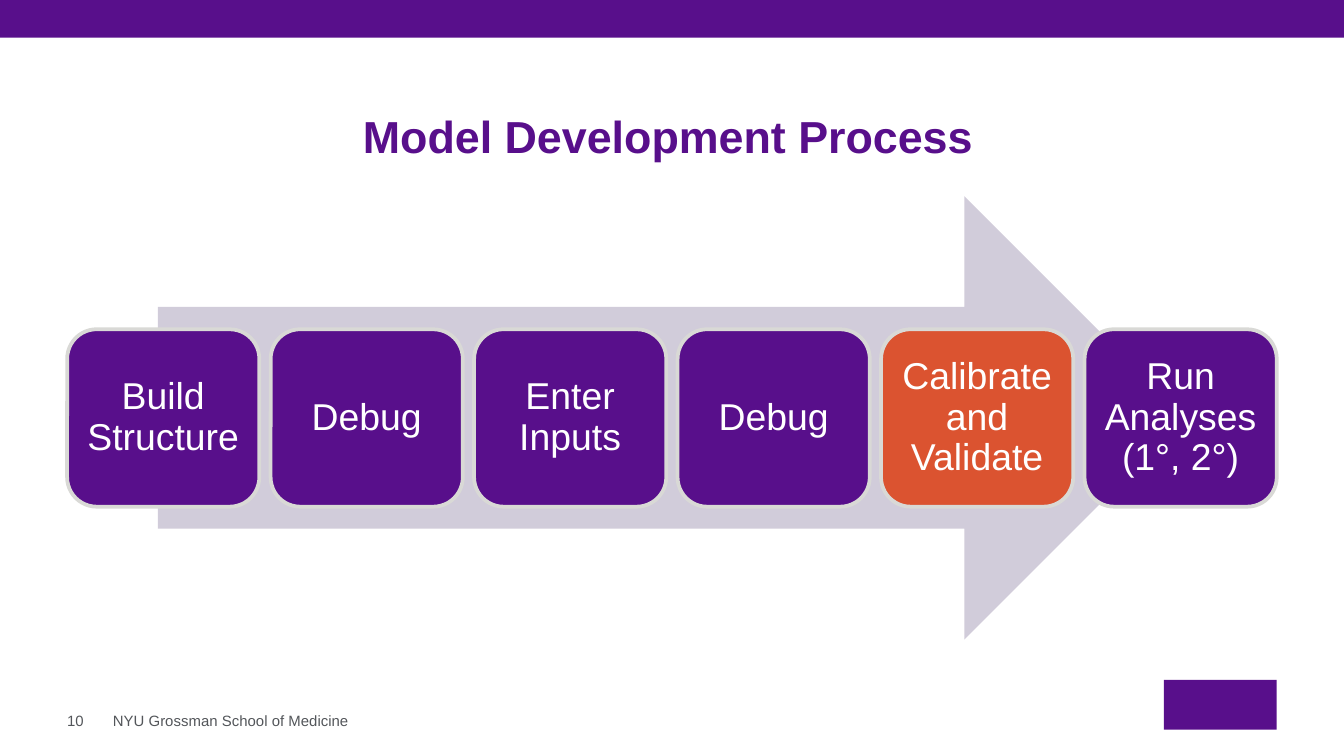
from pptx import Presentation
from pptx.dml.color import RGBColor
from pptx.enum.shapes import MSO_SHAPE
from pptx.enum.text import MSO_ANCHOR, PP_ALIGN
from pptx.util import Inches, Pt

# Content
TITLE = "Model Development Process"
SCHOOL = "NYU Grossman School of Medicine"
PAGE = "10"
PURPLE, ORANGE, WHITE = "580F8B", "DB5330", "FFFFFF"
STEPS = [
    ("Build Structure", PURPLE),
    ("Debug", PURPLE),
    ("Enter Inputs", PURPLE),
    ("Debug", PURPLE),
    ("Calibrate and Validate", ORANGE),
    ("Run Analyses (1°, 2°)", PURPLE),
]

# Layout, in inches, on a 16:9 slide
WIDTH = 10
HEIGHT = WIDTH * 9 / 16
MARGIN = 0.5
STEP_WIDTH, STEP_HEIGHT = 1.43, 1.32
ARROW_WIDTH, ARROW_HEIGHT, ARROW_TOP = 7.65, 3.3, 1.46
FOOTER_TOP, FOOTER_HEIGHT = 5.3, 0.13

# Text formats
TITLE_FONT = {"size": Pt(24), "bold": True}
FOOTER_FONT = {"size": Pt(8)}
STEP_FONT = {"size": Pt(20)}


def color(value):
    return RGBColor.from_string(value)


def add_block(kind, box, fill, line=None):
    shape = slide.shapes.add_shape(kind, *map(Inches, box))
    shape.shadow.inherit = False
    shape.fill.solid()
    shape.fill.fore_color.rgb = color(fill)
    if line:
        shape.line.color.rgb = color(line)
        shape.line.width = Pt(2)
    else:
        shape.line.fill.background()
    return shape


def write(shape, text, font, ink, anchor=MSO_ANCHOR.MIDDLE, inset=0,
          align=PP_ALIGN.LEFT, spacing=1.0):
    frame = shape.text_frame
    margins = dict.fromkeys(
        ("margin_left", "margin_top", "margin_right", "margin_bottom"), Inches(inset))
    for name, value in {**margins, "word_wrap": True, "vertical_anchor": anchor}.items():
        setattr(frame, name, value)
    paragraph = frame.paragraphs[0]
    paragraph.alignment = align
    paragraph.line_spacing = spacing
    run = paragraph.add_run()
    run.text = text
    for name, value in {"name": "Arial", **font}.items():
        setattr(run.font, name, value)
    run.font.color.rgb = color(ink)


def add_label(box, *args, **options):
    write(slide.shapes.add_textbox(*map(Inches, box)), *args, **options)


presentation = Presentation()
presentation.slide_width, presentation.slide_height = Inches(WIDTH), Inches(HEIGHT)
slide = presentation.slides.add_slide(presentation.slide_layouts[6])

# Top band and plain emblem block
add_block(MSO_SHAPE.RECTANGLE, (0, 0, WIDTH, 0.28), PURPLE)
add_block(MSO_SHAPE.RECTANGLE, (8.66, 5.06, 0.84, 0.37), PURPLE)

# Title and footer
add_label((2.7, 0.87, 4.59, 0.34), TITLE, TITLE_FONT, PURPLE,
          anchor=MSO_ANCHOR.BOTTOM, spacing=0.85)
for left, width, text in [(0.84, 3.7, SCHOOL), (MARGIN, 0.28, PAGE)]:
    add_label((left, FOOTER_TOP, width, FOOTER_HEIGHT), text, FOOTER_FONT, "53565A")

# Arrow behind the steps
add_block(MSO_SHAPE.RIGHT_ARROW,
          ((WIDTH - ARROW_WIDTH) / 2, ARROW_TOP, ARROW_WIDTH, ARROW_HEIGHT), "D1CCDA")

# Steps, evenly spread between the margins and centred on the arrow
pitch = (WIDTH - 2 * MARGIN - STEP_WIDTH) / (len(STEPS) - 1)
step_top = ARROW_TOP + (ARROW_HEIGHT - STEP_HEIGHT) / 2
for index, (text, fill) in enumerate(STEPS):
    step = add_block(MSO_SHAPE.ROUNDED_RECTANGLE,
                     (MARGIN + index * pitch, step_top, STEP_WIDTH, STEP_HEIGHT),
                     fill, "D9D9D6")
    write(step, text, STEP_FONT, WHITE, inset=0.08, align=PP_ALIGN.CENTER, spacing=0.9)

presentation.save("out.pptx")
